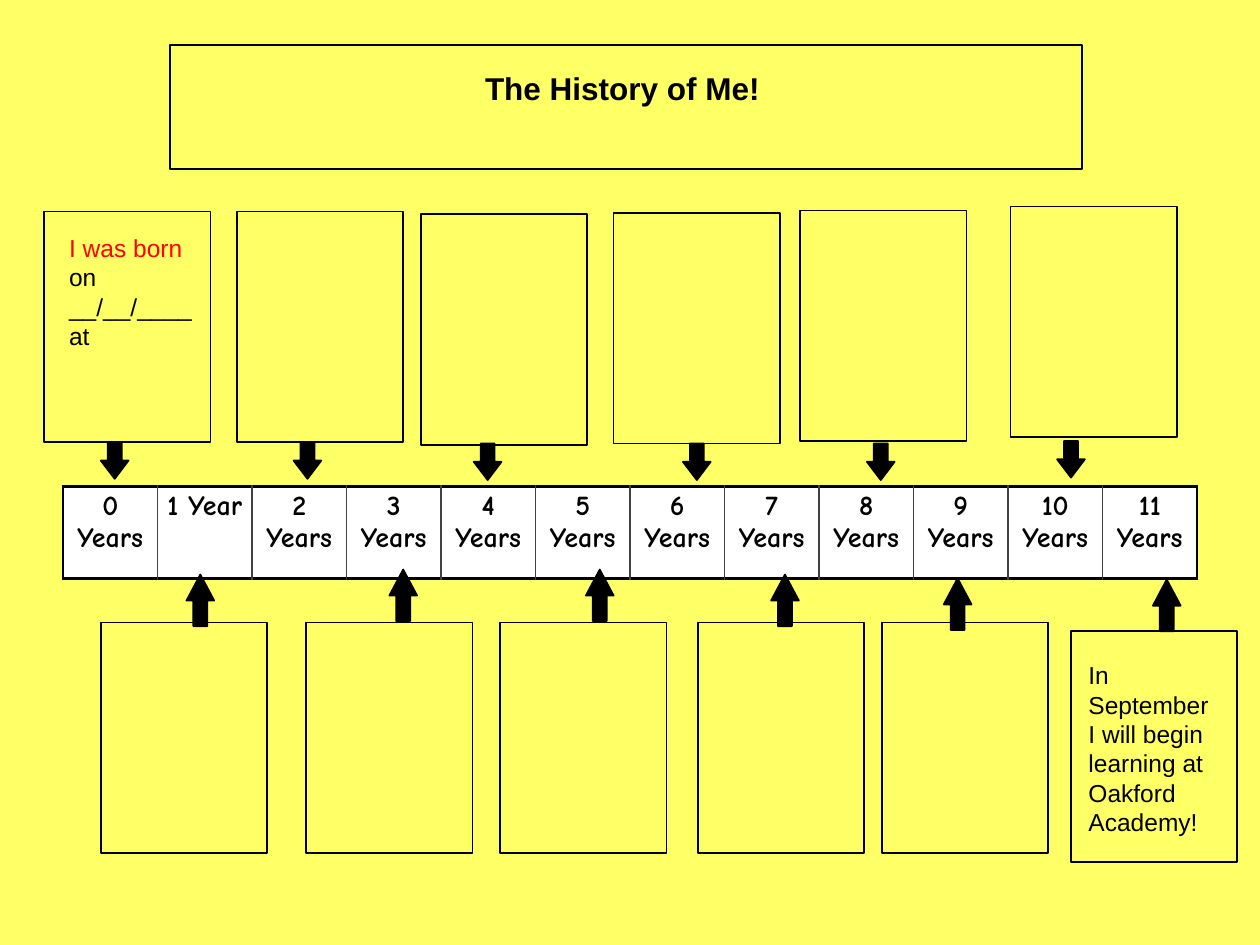
import pptx
import pptx.util
import pptx.dml.color
import pptx.enum.shapes
import pptx.enum.text
from lxml import etree
from pptx.oxml.ns import qn

SHAPES = pptx.enum.shapes.MSO_SHAPE
ALIGN = pptx.enum.text.PP_ALIGN
ANCHOR = pptx.enum.text.MSO_ANCHOR
inch = pptx.util.Inches


def colour(hex_value):
    return pptx.dml.color.RGBColor.from_string(hex_value)


def draw(preset, left, top, width, height, fill=None):
    shape = slide.shapes.add_shape(preset, inch(left), inch(top), inch(width), inch(height))
    shape.shadow.inherit = False
    if fill:
        shape.fill.solid()
        shape.fill.fore_color.rgb = colour(fill)
    else:
        shape.fill.background()
    shape.line.color.rgb = colour("000000")
    shape.line.width = pptx.util.Pt(1)
    return shape


presentation = pptx.Presentation()
WIDTH, HEIGHT = 10, 7.5
presentation.slide_width, presentation.slide_height = inch(WIDTH), inch(HEIGHT)
slide = presentation.slides.add_slide(presentation.slide_layouts[5])
slide.background.fill.solid()
slide.background.fill.fore_color.rgb = colour("FFFF66")

# Heading in its frame
draw(SHAPES.RECTANGLE, 1.35, 0.36, 7.24, 0.98)
heading = slide.shapes.title
heading_place = {"left": inch(2.64), "top": inch(0.5), "width": inch(4.6), "height": inch(0.71)}
for name, value in heading_place.items():
    setattr(heading, name, value)
heading.text_frame.text = "The History of Me!"
heading.text_frame.vertical_anchor = ANCHOR.TOP
heading.text_frame.paragraphs[0].alignment = ALIGN.CENTER
heading_font = heading.text_frame.paragraphs[0].runs[0].font
for name, value in {"name": "Arial", "size": pptx.util.Pt(18), "bold": True}.items():
    setattr(heading_font, name, value)
heading_font.color.rgb = colour("000000")

# Timeline: one cell for each year of age
AGES = 12
YEAR_WIDTH = 0.9 * WIDTH / AGES
timeline = slide.shapes.add_table(
    1, AGES, inch(0.05 * WIDTH), inch(3.86), inch(0.9 * WIDTH), inch(0.73)).table
timeline.rows[0].height = inch(0.73)
cell_format = {"vertical_anchor": ANCHOR.TOP}
for side in ("left", "right", "top", "bottom"):
    cell_format["margin_" + side] = inch(0.03)
year_format = {"name": "Comic Neue", "size": pptx.util.Pt(16), "bold": True}
for age in range(AGES):
    timeline.columns[age].width = inch(YEAR_WIDTH)
    cell = timeline.cell(0, age)
    cell.text = f"{age} Year" if age == 1 else f"{age} Years"
    for name, value in cell_format.items():
        setattr(cell, name, value)
    year = cell.text_frame.paragraphs[0]
    year.alignment = ALIGN.CENTER
    for name, value in year_format.items():
        setattr(year.runs[0].font, name, value)
    year.runs[0].font.color.rgb = colour("000000")
    # Borders come before the fill in the cell's properties
    borders = {
        "a:lnL": ("000000" if age == 0 else "404040", 1),
        "a:lnR": ("000000" if age == AGES - 1 else "404040", 1),
        "a:lnT": ("000000", 2),
        "a:lnB": ("000000", 2),
    }
    properties = cell._tc.get_or_add_tcPr()
    for tag, (border_colour, points) in borders.items():
        border = etree.SubElement(properties, qn(tag), w=str(pptx.util.Pt(points)))
        border_fill = etree.SubElement(border, qn("a:solidFill"))
        etree.SubElement(border_fill, qn("a:srgbClr"), val=border_colour)
    cell.fill.solid()
    cell.fill.fore_color.rgb = colour("FFFFFF")

# Memory boxes: box left, box top, arrow left, arrow top
ARROW_WIDTH = 0.22
above = [
    (0.35, 1.68, 0.8, 3.51), (1.88, 1.68, 2.33, 3.51), (3.34, 1.7, 3.76, 3.52),
    (4.87, 1.69, 5.42, 3.52), (6.35, 1.67, 6.88, 3.52), (8.02, 1.64, 8.39, 3.5),
]
below = [
    (0.8, 4.94, 1.48, 4.56), (2.43, 4.94, 3.09, 4.52), (3.97, 4.94, 4.65, 4.52),
    (5.54, 4.94, 6.12, 4.56), (7, 4.94, 7.49, 4.59), (8.5, 5.01, 9.15, 4.6),
]
for memories, arrow_height, turn, head in ((above, 0.29, 180, 0.66), (below, 0.41, 0, 0.94)):
    for box_left, box_top, arrow_left, arrow_top in memories:
        draw(SHAPES.RECTANGLE, box_left, box_top, 1.32, 1.83)
        arrow = draw(SHAPES.UP_ARROW, arrow_left, arrow_top, ARROW_WIDTH, arrow_height, "000000")
        arrow.rotation = turn
        arrow.adjustments[0], arrow.adjustments[1] = 0.5, head

# Words in the first and last boxes
stories = [
    ((0.45, 1.8, 1.22, 1.04), [("I was born", "FF0000"), (" on __/__/____at", "000000")]),
    ((8.54, 5.19, 1.21, 1.58),
     [("In September I will begin learning at Oakford Academy!", "000000")]),
]
for place, pieces in stories:
    story = slide.shapes.add_textbox(*map(inch, place)).text_frame
    story.word_wrap = True
    for words, words_colour in pieces:
        run = story.paragraphs[0].add_run()
        run.text = words
        for name, value in {"name": "Arial", "size": pptx.util.Pt(14)}.items():
            setattr(run.font, name, value)
        run.font.color.rgb = colour(words_colour)

presentation.save("out.pptx")
